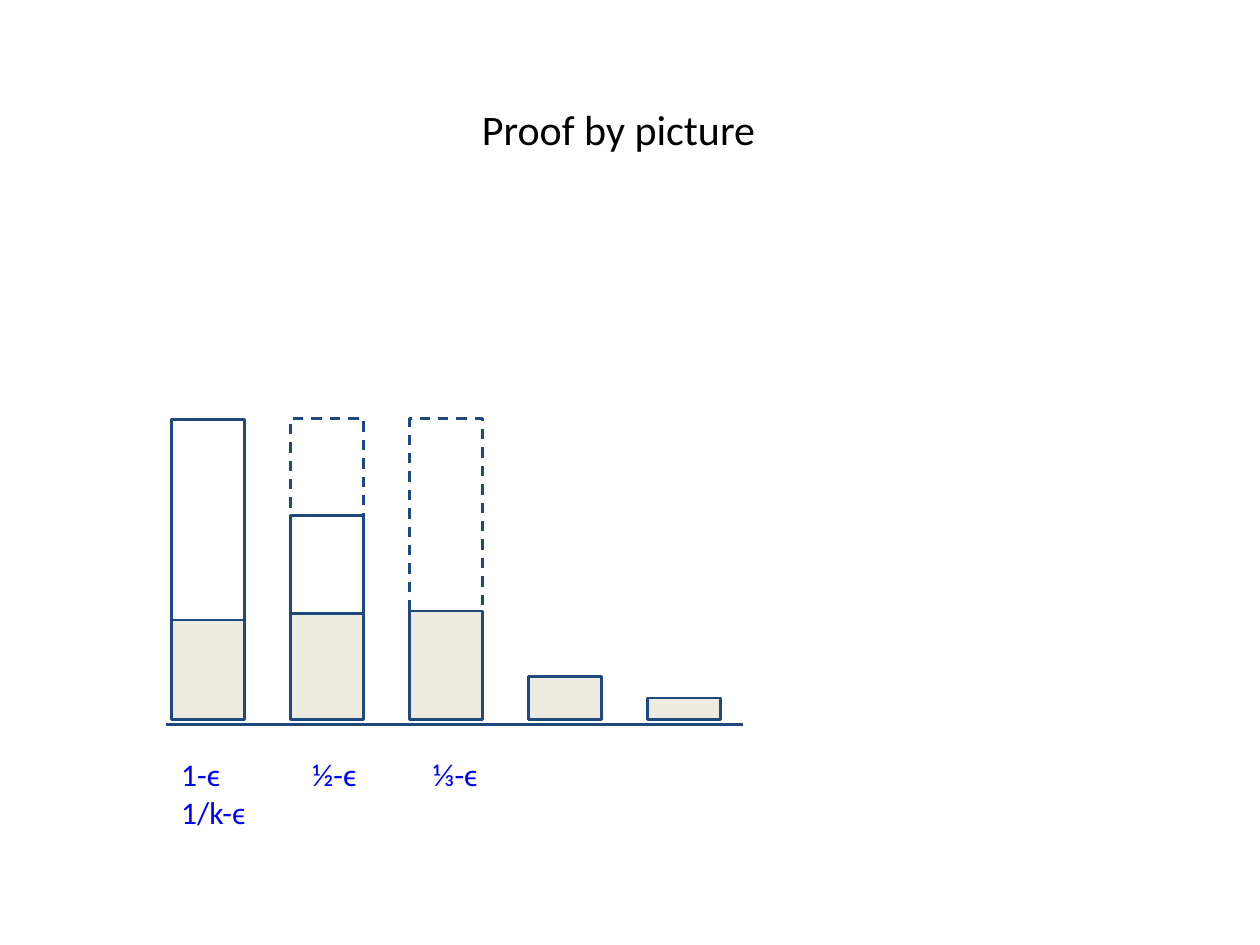
import pptx
import pptx.dml.color
import pptx.enum.dml
import pptx.enum.shapes
import pptx.enum.text
import pptx.oxml
import pptx.oxml.ns
import pptx.util
from pptx.util import Inches

NAVY = pptx.dml.color.RGBColor(0x1F, 0x49, 0x7D)
CREAM = pptx.dml.color.RGBColor(0xEE, 0xEC, 0xE1)
WHITE = pptx.dml.color.RGBColor(0xFF, 0xFF, 0xFF)
BLACK = pptx.dml.color.RGBColor(0x00, 0x00, 0x00)
BLUE = pptx.dml.color.RGBColor(0x00, 0x00, 0xFF)

FIRST_BIN, BIN_PITCH, BIN_WIDTH = 1.36, 0.945, 0.58
BINS = [
    [(3.34, 2.37, CREAM, False), (3.33, 1.59, WHITE, False)],
    [(3.32, 0.86, WHITE, True), (4.12, 1.59, CREAM, False), (4.09, 0.78, WHITE, False)],
    [(3.32, 1.53, WHITE, True), (4.85, 0.86, CREAM, False)],
    [(5.37, 0.34, CREAM, False)],
    [(5.54, 0.17, CREAM, False)],
]


def style_line(line, dashed=False):
    line.color.rgb = NAVY
    line.width = pptx.util.Pt(1.5)
    if dashed:
        line.dash_style = pptx.enum.dml.MSO_LINE.DASH


def add_block(slide, left, top, height, fill, dashed):
    block = slide.shapes.add_shape(
        pptx.enum.shapes.MSO_SHAPE.RECTANGLE,
        Inches(left), Inches(top), Inches(BIN_WIDTH), Inches(height))
    block.shadow.inherit = False
    block.fill.solid()
    block.fill.fore_color.rgb = fill
    style_line(block.line, dashed)


def add_baseline(slide, left, right, y):
    baseline = slide.shapes.add_connector(
        pptx.enum.shapes.MSO_CONNECTOR.STRAIGHT,
        Inches(left), Inches(y), Inches(right), Inches(y))
    style_line(baseline.line)
    properties = baseline._element.spPr
    properties.append(properties.makeelement(pptx.oxml.ns.qn("a:effectLst"), {}))


def add_text_frame(slide, left, top, width, height):
    frame = slide.shapes.add_textbox(
        Inches(left), Inches(top), Inches(width), Inches(height)).text_frame
    frame.word_wrap = True
    frame.vertical_anchor = pptx.enum.text.MSO_ANCHOR.TOP
    frame.margin_left = frame.margin_right = Inches(0.1)
    frame.margin_top = frame.margin_bottom = Inches(0.1)
    return frame


def add_run(paragraph, text, size, color):
    run = paragraph.add_run()
    run.text = text
    run.font.name = "Calibri"
    run.font.size = pptx.util.Pt(size)
    run.font.color.rgb = color


def add_tab_stops(paragraph, positions):
    properties = paragraph._p.get_or_add_pPr()
    stops = properties.makeelement(pptx.oxml.ns.qn("a:tabLst"), {})
    properties.append(stops)
    for position in positions:
        stops.append(stops.makeelement(
            pptx.oxml.ns.qn("a:tab"), {"pos": str(Inches(position)), "algn": "l"}))


def add_title(slide):
    heading = add_text_frame(slide, 0.41, 0.72, 9, 0.95).paragraphs[0]
    heading.alignment = pptx.enum.text.PP_ALIGN.CENTER
    add_run(heading, "Proof by picture", 24, BLACK)


def add_size_labels(slide):
    sizes = add_text_frame(slide, 1.34, 5.89, 4.46, 0.42).paragraphs[0]
    add_tab_stops(sizes, [1.04, 2.0])
    add_run(sizes, "1-ϵ\t½-ϵ\t⅓-ϵ", 18, BLUE)
    sizes.add_line_break()
    add_run(sizes, "1/k-ϵ", 18, BLUE)


def main():
    deck = pptx.Presentation()
    deck.slide_width, deck.slide_height = Inches(10), Inches(7.5)
    slide = deck.slides.add_slide(deck.slide_layouts[6])
    add_title(slide)
    add_baseline(slide, 1.32, 5.9, 5.75)
    for index, blocks in enumerate(BINS):
        for top, height, fill, dashed in blocks:
            add_block(slide, FIRST_BIN + index * BIN_PITCH, top, height, fill, dashed)
    add_size_labels(slide)
    deck.save("out.pptx")


if __name__ == "__main__":
    main()
